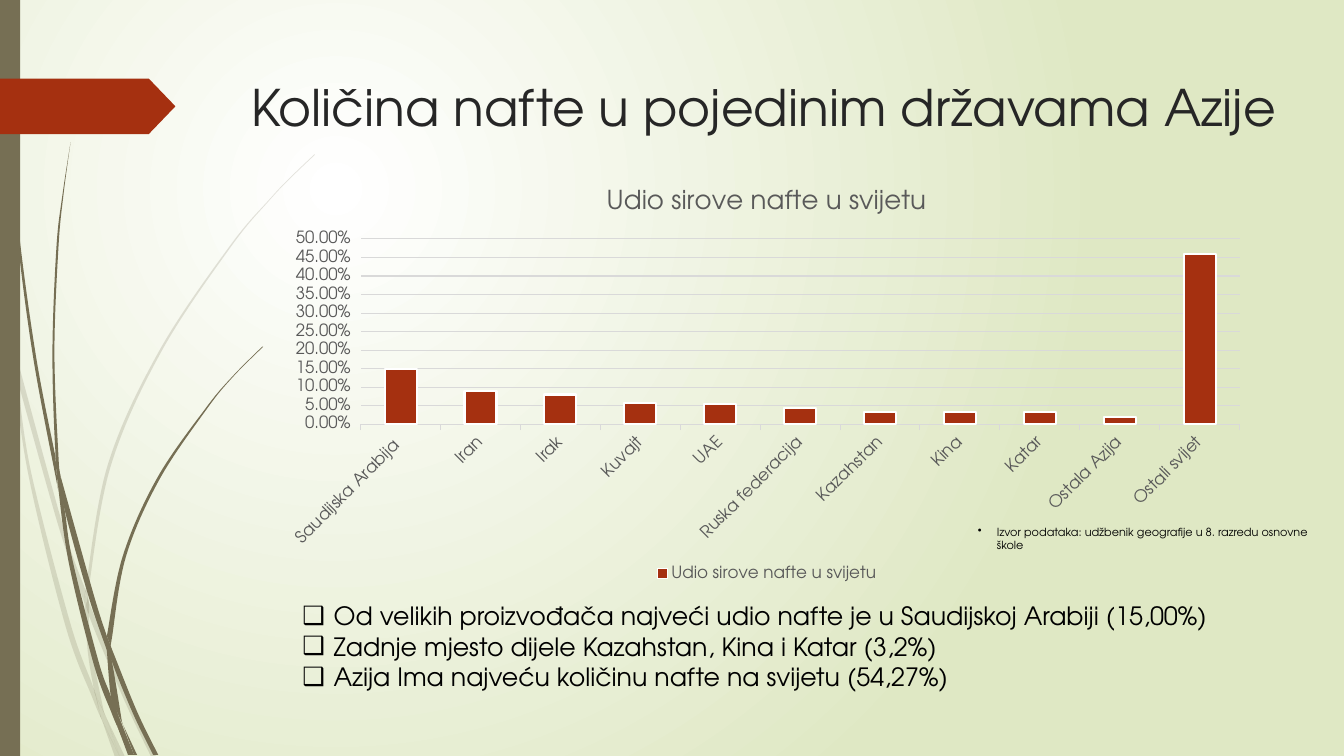
from lxml import etree
from pptx import Presentation
from pptx.chart.data import CategoryChartData
from pptx.dml.color import RGBColor
from pptx.enum.chart import XL_CHART_TYPE as ChartType, XL_LEGEND_POSITION as LegendPosition
from pptx.enum.chart import XL_TICK_MARK as TickMark
from pptx.enum.shapes import MSO_SHAPE as Preset
from pptx.enum.text import MSO_ANCHOR as Anchor, MSO_AUTO_SIZE as AutoSize, PP_ALIGN as Align
from pptx.oxml.ns import qn
from pptx.util import Inches, Pt

FONT = "TeX Gyre Adventor"
OLIVE, RUST, GREY, PALE_GREY = "766F54", "A53010", "595959", "D9D9D9"
SHARE_TITLE = "Udio sirove nafte u svijetu"
OIL_SHARES = {
    "Saudijska Arabija ": 0.15, "Iran": 0.09, "Irak": 0.08, "Kuvajt": 0.056,
    "UAE": 0.055, "Ruska federacija": 0.044, "Kazahstan": 0.032, "Kina": 0.032,
    "Katar": 0.032, "Ostala Azija": 0.02, "Ostali svijet": 0.46,
}
FINDINGS = [
    "Od velikih proizvođača najveći udio nafte je u Saudijskoj Arabiji (15,00%)",
    "Zadnje mjesto dijele Kazahstan, Kina i Katar (3,2%)",
    "Azija Ima najveću količinu nafte na svijetu (54,27%)",
]
# Each blade of grass has two curved sides: one going out, one coming back, in inches.
PALE_BLADES = [
    ([(0.11, 3.5), (0.09, 3.22), (0, 2.82)], [(0, 2.99), (0.1, 3.44), (0.11, 3.5)]),
    ([(0.17, 3.76), (0.58, 5.22), (0.84, 5.99)], [(0.85, 5.86), (0.62, 5.2), (0.14, 3.45)]),
    ([(0.88, 5.96), (0.88, 6.1), (1.23, 6.94), (1.5, 7.51)],
     [(1.55, 7.51), (1.27, 6.92), (0.92, 6.07), (0.88, 5.96)]),
    ([(1.19, 7.51), (1.24, 7.51)], [(1.05, 7.11), (1.19, 7.51)]),
    ([(0.11, 3.5), (0.28, 4.7), (0.65, 6.21), (0.92, 6.93), (1.01, 7.14)],
     [(0.99, 7.07), (0.93, 6.83), (0.7, 6.19), (0.31, 4.69), (0.17, 3.76), (0.11, 3.5)]),
    ([(0.84, 5.99), (0.87, 6.46), (0.93, 6.83), (0.96, 6.92), (1.05, 7.11)],
     [(1.03, 7.06), (0.91, 6.46), (0.88, 6.1), (0.88, 6.08), (0.84, 5.99)]),
    ([(0.88, 5.96), (0.88, 5.84), (1.1, 4.62), (1.6, 3.49), (2.29, 2.45), (2.68, 1.98),
      (2.9, 1.75), (3.12, 1.54)],
     [(3.12, 1.53), (2.89, 1.75), (2.68, 1.97), (2.28, 2.44), (1.58, 3.48), (1.07, 4.61),
      (0.85, 5.84), (0.85, 5.86)]),
    ([(1.01, 7.14), (1.14, 7.51)], [(1.19, 7.51), (1.01, 7.14)]),
    ([(0.88, 6.08), (0.88, 5.96), (0.85, 5.86)], [(0.84, 5.99), (0.88, 6.08)]),
    ([(0.93, 6.83), (0.99, 7.07), (1.01, 7.14), (1.19, 7.51)],
     [(1.19, 7.51), (1.05, 7.11), (0.96, 6.92), (0.93, 6.83)]),
]
DARK_BLADES = [
    ([(0.04, 0), (0.05, 0.48), (0.08, 1.09), (0.19, 2.32), (0.36, 3.55), (0.55, 4.53)],
     [(0.57, 4.81), (0.56, 4.77), (0.33, 3.55), (0.17, 2.33), (0.07, 1.1), (0.04, 0.48),
      (0.03, 0)]),
    ([(0.6, 4.72), (0.64, 5.05), (0.88, 5.92), (1.06, 6.45)],
     [(1.06, 6.31), (0.93, 5.9), (0.6, 4.72)]),
    ([(1.1, 6.41), (1.11, 6.56), (1.32, 7.08), (1.52, 7.49)],
     [(1.57, 7.49), (1.36, 7.06), (1.13, 6.49), (1.1, 6.41)]),
    ([(0.57, 4.77), (0.68, 5.57), (0.93, 6.59), (1.11, 7.08), (1.17, 7.22)],
     [(1.16, 7.17), (1.1, 6.91), (0.98, 6.57), (0.72, 5.56), (0.64, 5.05), (0.57, 4.77)]),
    ([(0.6, 4.72), (0.58, 4.53), (0.54, 3.49), (0.58, 2.45), (0.63, 1.93), (0.7, 1.41)],
     [(0.7, 1.41), (0.62, 1.93), (0.56, 2.45), (0.52, 3.49), (0.55, 4.49), (0.6, 4.72)]),
    ([(1.33, 7.49), (1.36, 7.49)], [(1.22, 7.19), (1.33, 7.49)]),
    ([(0.55, 4.49), (0.57, 4.77), (0.64, 5.05)], [(0.6, 4.72), (0.55, 4.49)]),
    ([(1.1, 6.41), (1.11, 6.33), (1.25, 5.52), (1.58, 4.76), (2.05, 4.06), (2.31, 3.74),
      (2.61, 3.44)],
     [(2.6, 3.44), (2.31, 3.73), (2.04, 4.05), (1.56, 4.74), (1.22, 5.51), (1.06, 6.31)]),
    ([(1.17, 7.22), (1.27, 7.49)], [(1.31, 7.49), (1.17, 7.22)]),
    ([(1.06, 6.45), (1.1, 6.91), (1.16, 7.06), (1.22, 7.19)],
     [(1.21, 7.16), (1.11, 6.56), (1.06, 6.45)]),
    ([(1.06, 6.31), (1.06, 6.45), (1.11, 6.56)], [(1.1, 6.41), (1.06, 6.31)]),
    ([(1.1, 6.91), (1.17, 7.22), (1.3, 7.49)], [(1.33, 7.49), (1.16, 7.06), (1.1, 6.91)]),
]


def colour(hex_text):
    return RGBColor.from_string(hex_text)


def set_font(font, size, hex_text):
    for name, value in {"name": FONT, "size": Pt(size), "bold": False}.items():
        setattr(font, name, value)
    font.color.rgb = colour(hex_text)


def place(box, *bounds):
    for name, value in zip(("left", "top", "width", "height"), bounds):
        setattr(box, name, Inches(value))


def paint(shape, hex_text, opacity=100):
    shape.shadow.inherit = False
    shape.line.fill.background()
    shape.fill.solid()
    shape.fill.fore_color.rgb = colour(hex_text)
    if opacity < 100:
        tint = shape.fill._xPr.find(".//" + qn("a:srgbClr"))
        etree.SubElement(tint, qn("a:alpha"), val=str(opacity * 1000))


def add_background(page):
    fill = page.background.fill
    fill.gradient()
    for stop, position, tone in zip(fill.gradient_stops, (0, 1), ("FFFFFF", "DFE8C4")):
        stop.position = position
        stop.color.rgb = colour(tone)
    gradient = page.background._cSld.find(".//" + qn("a:gradFill"))
    gradient.remove(gradient.find(qn("a:lin")))
    circle = etree.SubElement(gradient, qn("a:path"), path="circle")
    etree.SubElement(circle, qn("a:fillToRect"), l="50000", t="50000", r="100000", b="100000")


def bend(steps):
    """Turn the straight steps of one side into a smooth run of Bézier curves."""
    spots = [(int(step[0].get("x")), int(step[0].get("y"))) for step in steps]
    ends = [spots[0], *spots, spots[-1]]
    for step, p0, p1, p2, p3 in zip(steps[1:], ends, ends[1:], ends[2:], ends[3:]):
        step.tag = qn("a:cubicBezTo")
        handles = [[b + (c - a) / 6 for a, b, c in zip(p0, p1, p2)],
                   [c - (d - b) / 6 for b, c, d in zip(p1, p2, p3)]]
        for index, (x, y) in enumerate(handles):
            step.insert(index, etree.Element(qn("a:pt"), x=str(round(x)), y=str(round(y))))


def add_blade(page, sides, opacity):
    corners = [(Inches(x), Inches(y)) for side in sides for x, y in side]
    builder = page.shapes.build_freeform(*corners[0])
    builder.add_line_segments(corners[1:], close=True)
    blade = builder.convert_to_shape()
    steps = list(blade._element.find(".//" + qn("a:path")))
    turn = len(sides[0])
    bend(steps[:turn])
    bend(steps[turn:len(corners)])
    paint(blade, OLIVE, opacity)


def add_panel(page, preset, hex_text, *bounds):
    panel = page.shapes.add_shape(preset, *map(Inches, bounds))
    paint(panel, hex_text)
    return panel


def write(box, lines, size, hex_text, bullet=None, indent=0):
    frame = box.text_frame
    settings = {"word_wrap": True, "auto_size": AutoSize.NONE, "vertical_anchor": Anchor.TOP}
    for name, value in settings.items():
        setattr(frame, name, value)
    for number, line in enumerate(lines):
        para = frame.add_paragraph() if number else frame.paragraphs[0]
        para.alignment = Align.LEFT
        para.space_before = Pt(0)
        span = para.add_run()
        span.text = line
        set_font(span.font, size, hex_text)
        if bullet:
            props = para._p.get_or_add_pPr()
            props.set("marL", str(Inches(indent)))
            props.set("indent", str(-Inches(indent)))
            etree.SubElement(props, qn("a:buChar"), char=bullet)


def style_axes(chart):
    shares, countries = chart.value_axis, chart.category_axis
    for axis in (shares, countries):
        axis.major_tick_mark = TickMark.OUTSIDE
        set_font(axis.tick_labels.font, 12, GREY)
    for name, value in {"minimum_scale": 0, "maximum_scale": 0.5, "major_unit": 0.05}.items():
        setattr(shares, name, value)
    shares.tick_labels.number_format = "0.00%"
    shares.tick_labels.number_format_is_linked = False
    shares.format.line.fill.background()
    for line in (shares.major_gridlines.format.line, countries.format.line):
        line.width = Pt(0.75)
        line.color.rgb = colour(PALE_GREY)
    label_body = countries._element.find(qn("c:txPr")).find(qn("a:bodyPr"))
    label_body.set("rot", "-2700000")


def add_share_chart(page, *bounds):
    data = CategoryChartData(number_format="0.00%")
    data.categories = OIL_SHARES.keys()
    data.add_series(SHARE_TITLE, OIL_SHARES.values())
    chart = page.shapes.add_chart(ChartType.COLUMN_CLUSTERED, *map(Inches, bounds), data).chart
    set_font(chart.font, 10, "000000")
    heading = chart.chart_title.text_frame
    heading.text = SHARE_TITLE
    set_font(heading.paragraphs[0].runs[0].font, 18.6, GREY)
    chart.has_legend = True
    chart.legend.position = LegendPosition.BOTTOM
    chart.legend.include_in_layout = False
    set_font(chart.legend.font, 12, GREY)
    style_axes(chart)
    plot = chart.plots[0]
    plot.gap_width = 150
    plot.vary_by_categories = False
    columns = plot.series[0].format
    columns.fill.solid()
    columns.fill.fore_color.rgb = colour(RUST)
    columns.line.color.rgb = colour("FFFFFF")
    columns.line.width = Pt(1.5)


def main():
    deck = Presentation()
    deck.slide_width, deck.slide_height = Inches(13.33), Inches(7.5)
    page = deck.slides.add_slide(deck.slide_layouts[1])
    add_background(page)
    for blades, opacity in ((PALE_BLADES, 20), (DARK_BLADES, 100)):
        for sides in blades:
            add_blade(page, sides, opacity)
    add_panel(page, Preset.RECTANGLE, OLIVE, 0, 0, 0.2, 7.5)
    arrow_tag = add_panel(page, Preset.PENTAGON, RUST, 0, 0.78, 1.74, 0.55)
    arrow_tag.adjustments[0] = 0.48
    title, findings = page.shapes.title, page.placeholders[1]
    place(title, 2.39, 0.7, 10.43, 1.4)
    write(title, ["Količina nafte u pojedinim državama Azije"], 36, "262626")
    add_share_chart(page, 2.72, 1.68, 9.77, 4.13)
    place(findings, 2.9, 5.91, 9.42, 1.01)
    write(findings, FINDINGS, 18, "000000", "❑", 0.31)
    source_note = page.shapes.add_textbox(*map(Inches, (9.6, 5.16, 3.73, 0.37)))
    write(source_note, ["Izvor podataka: udžbenik geografije u 8. razredu osnovne škole"],
          8, "000000", "•", 0.19)
    deck.save("out.pptx")


if __name__ == "__main__":
    main()
